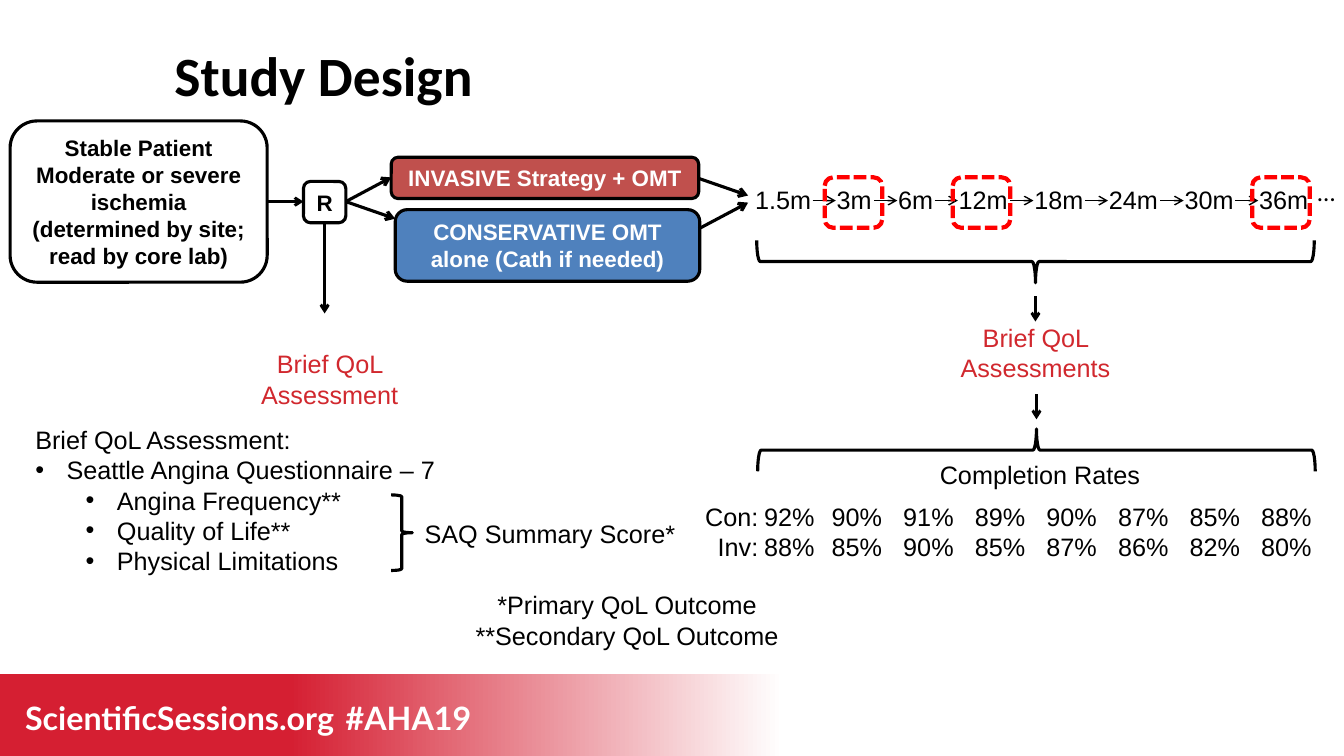
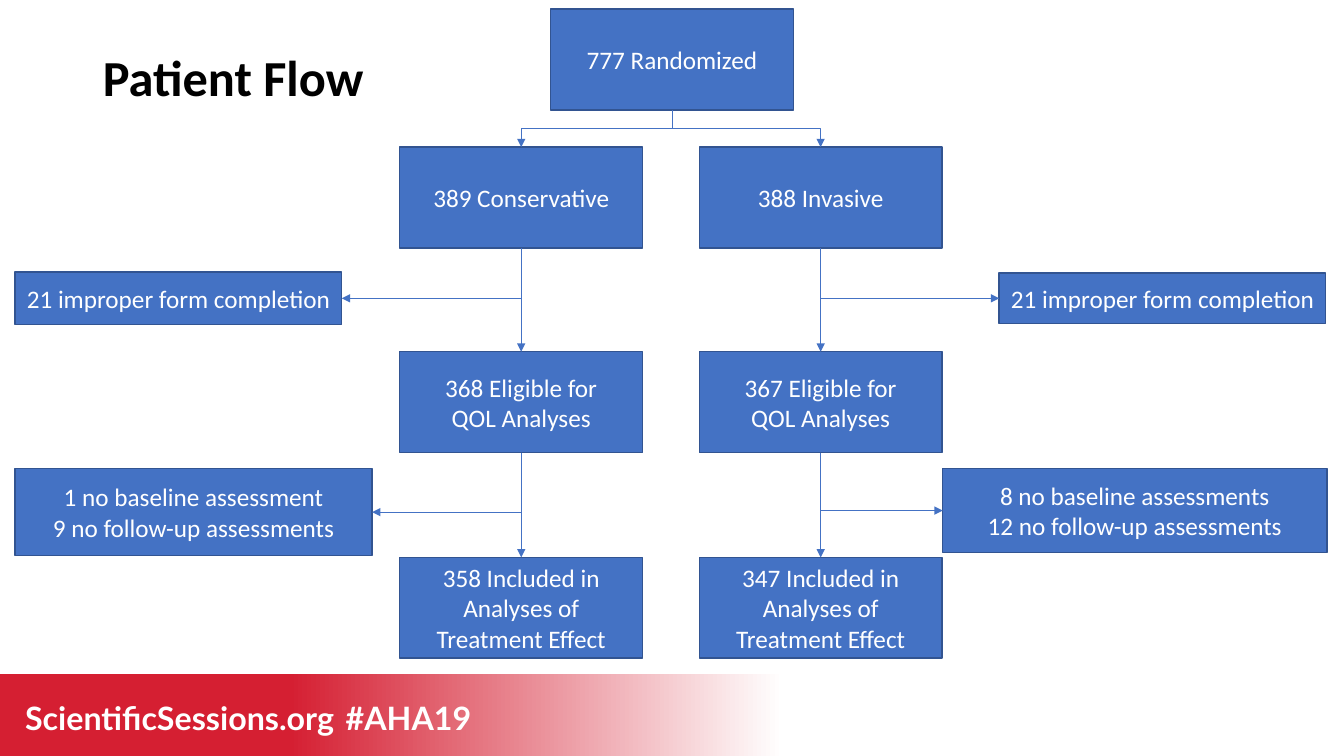
from lxml import etree
from pptx import Presentation
from pptx.dml.color import RGBColor
from pptx.enum import dml, shapes, text
from pptx.oxml.ns import qn
from pptx.util import Inches, Pt

rgb = RGBColor.from_string
BLACK, WHITE, RED = "000000", "FFFFFF", "D1282E"
BAND_RED, FLOW_BLUE, FLOW_EDGE = "D51F32", "4472C4", "325491"
SHAPE, ALIGN = shapes.MSO_SHAPE, text.PP_ALIGN


def add_box(slide, kind, at, lines=(), size=18, font="Arial", color=BLACK, bold=False,
            align=ALIGN.CENTER, fill=None, edge=None, weight=2.25, wrap=True):
    """Add a preset shape, or a plain text box when kind is None."""
    place = [Inches(v) for v in at]
    if kind is None:
        box = slide.shapes.add_textbox(*place)
    else:
        box = slide.shapes.add_shape(kind, *place)
        box.shadow.inherit = False
        box.fill.background()
        box.line.color.rgb = rgb(edge)
        box.line.width = Pt(weight)
    if fill:
        box.fill.solid()
        box.fill.fore_color.rgb = rgb(fill)
    frame = box.text_frame
    frame.word_wrap = wrap
    frame.text = "\n".join(lines)
    for paragraph in frame.paragraphs:
        paragraph.alignment = align
        for run in paragraph.runs:
            run.font.size, run.font.name, run.font.bold = Pt(size), font, bold
            run.font.color.rgb = rgb(color)
    return box


def add_arrow(slide, start, end, color=BLACK, weight=2, head="arrow", bend=None):
    """Add an arrow; bend names an elbow preset that leaves start downwards."""
    (x1, y1), (x2, y2) = start, end
    if bend:
        # An elbow runs sideways first, so it is laid flat and then turned
        mid_x, mid_y = (x1 + x2) / 2, (y1 + y2) / 2
        half_w, half_h = (y2 - y1) / 2, abs(x2 - x1) / 2
        ends = (mid_x - half_w, mid_y - half_h, mid_x + half_w, mid_y + half_h)
        kind = shapes.MSO_CONNECTOR.ELBOW
    else:
        ends, kind = (x1, y1, x2, y2), shapes.MSO_CONNECTOR.STRAIGHT
    arrow = slide.shapes.add_connector(kind, *[Inches(v) for v in ends])
    arrow.line.color.rgb = rgb(color)
    arrow.line.width = Pt(weight)
    properties = arrow._element.spPr
    if bend:
        properties.find(qn("a:prstGeom")).set("prst", bend)
        to_right = x2 > x1
        turned = properties.find(qn("a:xfrm"))
        turned.set("rot", str((270 if to_right else 90) * 60000))
        if to_right:
            turned.set("flipH", "1")
    etree.SubElement(properties.find(qn("a:ln")), qn("a:tailEnd"), type=head)
    etree.SubElement(properties, qn("a:effectLst"))


prs = Presentation()
prs.slide_width, prs.slide_height = Inches(13.33), Inches(7.5)
design = prs.slides.add_slide(prs.slide_layouts[1])
flow = prs.slides.add_slide(prs.slide_layouts[5])

# Footer band, moved to the master so that both slides share it
band = add_box(design, SHAPE.RECTANGLE, (-0.01, 6.69, 7.78, 0.81), edge=WHITE)
band.line.fill.background()
band.fill.gradient()
band.fill.gradient_angle = 180
for stop, color, position in zip(band.fill.gradient_stops, (WHITE, BAND_RED), (0, 0.63)):
    stop.color.rgb = rgb(color)
    stop.position = position
footer = [band]
for words, at in (("ScientificSessions.org", (0.15, 7.01, 4.74, 0.37)),
                  ("#AHA19", (3.33, 7.01, 1.45, 0.35))):
    label = add_box(design, None, at, [words], 23, "Lato", WHITE, True, ALIGN.LEFT)
    label.text_frame.paragraphs[0].line_spacing = Pt(18.2)
    footer.append(label)
for part in footer:
    prs.slide_master.shapes._spTree.append(part._element)

# Titles
for slide, words, size, at in ((design, "Study Design", 39.6, (1.63, 0.49, 11.6, 0.58)),
                               (flow, "Patient Flow", 36, (0.92, 0.4, 11.5, 0.79))):
    title = slide.shapes.title
    title.left, title.top, title.width, title.height = [Inches(v) for v in at]
    title.text_frame.text = words
    title.text_frame.auto_size = text.MSO_AUTO_SIZE.NONE
    title.text_frame.vertical_anchor = text.MSO_ANCHOR.MIDDLE
    heading = title.text_frame.paragraphs[0]
    heading.alignment, heading.line_spacing = ALIGN.LEFT, 0.9
    heading.font.size, heading.font.name, heading.font.bold = Pt(size), "Calibri", True
    heading.font.color.rgb = rgb(BLACK)

# Study Design: patients, randomization and the two strategies
for at, lines, color, fill in (
        ((3.01, 1.8, 0.42, 0.41), ["R"], BLACK, None),
        ((3.88, 1.56, 3.05, 0.41), ["INVASIVE Strategy + OMT"], WHITE, "C0504D"),
        ((3.92, 2.08, 3.02, 0.71), ["CONSERVATIVE OMT alone (Cath if needed)"], WHITE, "4F81BD"),
        ((0.1, 1.2, 2.55, 1.6), ["Stable Patient", "Moderate or severe ischemia",
                                 "(determined by site; read by core lab)"], BLACK, None)):
    add_box(design, SHAPE.ROUNDED_RECTANGLE, at, lines, 16, color=color, bold=True,
            fill=fill, edge=BLACK)
for start, end, weight in (
        ((2.64, 2), (3.01, 2), 2), ((3.22, 2.21), (3.22, 3.11), 2),
        ((3.43, 2), (3.88, 1.76), 2.25), ((3.43, 2), (3.92, 2.17), 2.25),
        ((6.93, 1.77), (7.42, 1.94), 2.25), ((6.93, 2.27), (7.42, 2.01), 2.25),
        ((10.27, 2.94), (10.27, 3.19), 2), ((10.28, 3.91), (10.28, 4.16), 2)):
    add_arrow(design, start, end, weight=weight)
add_box(design, None, (2.45, 3.41, 1.64, 0.71), ["Brief QoL Assessment"], color=RED)
add_box(design, None, (9.41, 3.15, 1.72, 0.71), ["Brief QoL Assessments"], color=RED)

# Follow-up timeline
visits = [("1.5m", 7.39), ("3m", 8.2), ("6m", 8.81), ("12m", 9.41),
          ("18m", 10.16), ("24m", 10.9), ("30m", 11.65), ("36m", 12.39)]
for i, (month, left) in enumerate(visits):
    width = 0.14 * len(month) + 0.27
    add_box(design, None, (left, 1.78, width, 0.4), [month], align=ALIGN.LEFT, wrap=False)
    if i:
        add_arrow(design, (left - 0.14, 1.99), (left + 0.09, 1.99), weight=1)
for left in (8.18, 9.45, 12.42):
    key_visit = add_box(design, SHAPE.ROUNDED_RECTANGLE, (left, 1.76, 0.57, 0.5),
                        edge="FF0000", weight=3)
    key_visit.line.dash_style = dml.MSO_LINE.SQUARE_DOT
add_box(design, None, (12.97, 1.7, 0.38, 0.4), ["…"], font="Calibri",
        align=ALIGN.LEFT, wrap=False)

# Braces
for at, turn in (((10.06, -0.17, 0.42, 5.53), 90), ((10.07, 1.7, 0.42, 5.53), 270),
                 ((3.88, 4.91, 0.21, 0.75), 0)):
    add_box(design, SHAPE.RIGHT_BRACE, at, edge=BLACK).rotation = turn

# Assessment list
assessment = design.placeholders[1]
assessment.left, assessment.top = Inches(0.25), Inches(4.16)
assessment.width, assessment.height = Inches(6.4), Inches(1.62)
items = [("Brief QoL Assessment:", 0, 0), ("Seattle Angina Questionnaire – 7", 0, 0.31),
         ("Angina Frequency**", 1, 0.81), ("Quality of Life**", 1, 0.81),
         ("Physical Limitations", 1, 0.81)]
assessment.text_frame.text = "\n".join(item for item, _, _ in items)
assessment.text_frame.auto_size = text.MSO_AUTO_SIZE.NONE
for paragraph, (_, level, indent) in zip(assessment.text_frame.paragraphs, items):
    paragraph.level = level
    paragraph.space_before, paragraph.line_spacing = Pt(0), 1.0
    settings = paragraph._p.get_or_add_pPr()
    settings.set("marL", str(Inches(indent)))
    settings.set("indent", str(-Inches(0.31) if indent else 0))
    if indent:
        etree.SubElement(settings, qn("a:buFont"), typeface="Arial")
        etree.SubElement(settings, qn("a:buChar"), char="•")
    else:
        etree.SubElement(settings, qn("a:buNone"))
    paragraph.font.size, paragraph.font.name = Pt(18), "Arial"
    paragraph.font.color.rgb = rgb(BLACK)

# Captions
for at, lines in (((4.1, 5.09, 2.71, 0.4), ["SAQ Summary Score*"]),
                  ((4.6, 5.8, 3.24, 0.71), ["*Primary QoL Outcome", "**Secondary QoL Outcome"]),
                  ((9.21, 4.51, 2.21, 0.4), ["Completion Rates"])):
    add_box(design, None, at, lines, wrap=False)

# Completion rates, one column per visit
add_box(design, None, (6.79, 4.92, 0.83, 0.71), ["Con:", "Inv:"], align=ALIGN.RIGHT)
rates = [(92, 88), (90, 85), (91, 90), (89, 85), (90, 87), (87, 86), (85, 82), (88, 80)]
for i, pair in enumerate(rates):
    left = 8.15 + 0.71 * (i - 1) if i else 7.48
    add_box(design, None, (left, 4.92, 0.71, 0.71), [f"{rate}%" for rate in pair],
            align=ALIGN.LEFT, wrap=False)

# Patient Flow: boxes of the two arms
BOX_W, BOX_H, ROWS = 2.41, 1, (1.46, 3.49, 5.53)
steps = [((5.46, 0.09, BOX_W, BOX_H), ["777 Randomized"])]
arms = [
    (5.17, [["389 Conservative"], ["368 Eligible for", "QOL Analyses"],
            ["358 Included in Analyses of", "Treatment Effect"]],
     [((0.15, 2.7, 3.24, 0.52), ["21 improper form completion"]),
      ((0.15, 4.65, 3.54, 0.86), ["1 no baseline assessment", "9 no follow-up assessments"])]),
    (8.14, [["388 Invasive"], ["367 Eligible for", "QOL Analyses"],
            ["347 Included in Analyses of Treatment Effect"]],
     [((9.91, 2.71, 3.24, 0.5), ["21 improper form completion"]),
      ((9.35, 4.65, 3.81, 0.83), ["8 no baseline assessments", "12 no follow-up assessments"])]),
]
links = []
for center, stages, exclusions in arms:
    links.append(((6.67, 1.09), (center, ROWS[0]), "bentConnector3"))
    for top, lines in zip(ROWS, stages):
        steps.append(((center - BOX_W / 2, top, BOX_W, BOX_H), lines))
    for top, next_top, (at, lines) in zip(ROWS, ROWS[1:], exclusions):
        steps.append((at, lines))
        left, side_top, width, height = at
        near_edge = left if left > center else left + width
        links.append(((center, top + BOX_H), (center, next_top), None))
        links.append(((center, top + BOX_H), (near_edge, side_top + height / 2),
                      "bentConnector2"))
for at, lines in steps:
    add_box(flow, SHAPE.RECTANGLE, at, lines, font="Calibri", color=WHITE,
            fill=FLOW_BLUE, edge=FLOW_EDGE, weight=1)

# Patient Flow: arrows
for start, end, bend in links:
    add_arrow(flow, start, end, FLOW_BLUE, 0.5, "triangle", bend)

prs.save("out.pptx")
